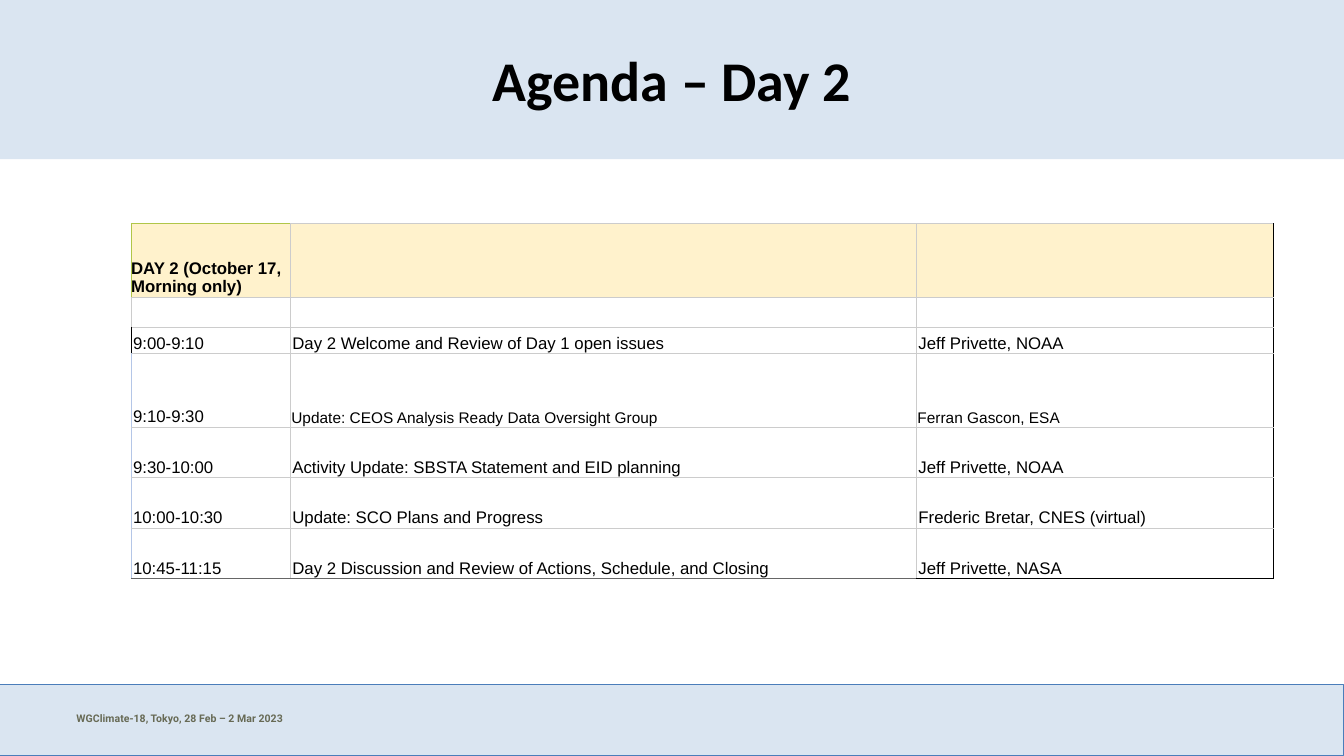
from dataclasses import dataclass

from lxml import etree
from pptx import Presentation
from pptx.dml.color import RGBColor
from pptx.enum import shapes, text
from pptx.oxml import ns
from pptx.util import Inches, Pt


@dataclass(frozen=True)
class Theme:
    band: str = "DAE5F1"
    band_line: str = "4A7DBA"
    ink: str = "000000"
    footer_ink: str = "676A55"
    day_fill: str = "FFF2CC"
    day_edge: str = "B0C648"
    grid: str = "CCCCCC"
    time_edge: str = "B4C6E7"
    bottom_edge: str = "666666"
    title_font: str = "Calibri"
    table_font: str = "Arial"
    footer_font: str = "Roboto"
    title_size: float = 40
    table_size: float = 12
    small_size: float = 11
    footer_size: float = 7.5
    rule: float = 0.5


THEME = Theme()
COLUMNS = [1.58, 6.21, 3.54]
ROW_HEIGHTS = [0.73, 0.3, 0.26, 0.73, 0.5, 0.5, 0.5]
SMALL_ROW = 3
AGENDA = [
    ("DAY 2 (October 17, Morning only)", "", ""),
    ("", "", ""),
    ("9:00-9:10", "Day 2 Welcome and Review of Day 1 open issues", "Jeff Privette, NOAA"),
    ("9:10-9:30", "Update: CEOS Analysis Ready Data Oversight Group", "Ferran Gascon, ESA"),
    ("9:30-10:00", "Activity Update: SBSTA Statement and EID planning", "Jeff Privette, NOAA"),
    ("10:00-10:30", "Update: SCO Plans and Progress", "Frederic Bretar, CNES (virtual)"),
    ("10:45-11:15", "Day 2 Discussion and Review of Actions, Schedule, and Closing",
     "Jeff Privette, NASA"),
]


def format_runs(paragraph, font, size, color, bold=False):
    for run in paragraph.runs:
        run.font.name, run.font.size, run.font.bold = font, Pt(size), bold
        run.font.color.rgb = RGBColor.from_string(color)


def add_band(slide, left, top, width, height, line=None):
    band = slide.shapes.add_shape(shapes.MSO_SHAPE.RECTANGLE, Inches(left), Inches(top),
                                  Inches(width), Inches(height))
    band.shadow.inherit = False
    band.fill.solid()
    band.fill.fore_color.rgb = RGBColor.from_string(THEME.band)
    if line:
        band.line.color.rgb = RGBColor.from_string(line)
        band.line.width = Pt(0.75)
    else:
        band.line.fill.background()


def add_label(slide, left, top, width, height, words):
    label = slide.shapes.add_textbox(Inches(left), Inches(top), Inches(width), Inches(height))
    label.text_frame.word_wrap = True
    label.text_frame.text = words
    return label.text_frame


def add_header(slide, left, top, width, height):
    add_band(slide, left, top, width, height)
    title = add_label(slide, left + 2.11, top + 0.16, 9.11, 1.25, "Agenda – Day 2")
    title.vertical_anchor = text.MSO_ANCHOR.MIDDLE
    title.paragraphs[0].alignment = text.PP_ALIGN.CENTER
    format_runs(title.paragraphs[0], THEME.title_font, THEME.title_size, THEME.ink, True)


def add_footer(slide, left, top, width, height):
    add_band(slide, left, top, width, height, THEME.band_line)
    meeting = add_label(slide, left + 0.66, top + 0.22, 8.65, 0.23,
                        "WGClimate-18, Tokyo, 28 Feb – 2 Mar 2023")
    format_runs(meeting.paragraphs[0], THEME.footer_font, THEME.footer_size,
                THEME.footer_ink, True)


def edge_colors(row, column):
    """Colours of the left, right, top and bottom edges of an agenda cell."""
    left = right = top = bottom = THEME.grid
    if column == 0:
        if row == 0:
            left = top = THEME.day_edge
        elif row == 2:
            left = THEME.ink
        elif row > 2:
            left = THEME.time_edge
    is_last_column = column == len(COLUMNS) - 1
    if is_last_column:
        right = THEME.ink
    if row == len(AGENDA) - 1:
        bottom = THEME.ink if is_last_column else THEME.bottom_edge
    return {"a:lnL": left, "a:lnR": right, "a:lnT": top, "a:lnB": bottom}


def draw_edges(cell, edges):
    properties = cell._tc.get_or_add_tcPr()
    for tag, color in edges.items():
        edge = etree.SubElement(properties, ns.qn(tag), w=str(Pt(THEME.rule)))
        fill = etree.SubElement(edge, ns.qn("a:solidFill"))
        etree.SubElement(fill, ns.qn("a:srgbClr"), val=color)


def fill_cell(cell, row, column, words):
    draw_edges(cell, edge_colors(row, column))
    is_small = row == SMALL_ROW and column > 0
    side = 0 if row == 0 else 0.01 if is_small else 0.02
    cell.margin_left = cell.margin_right = Inches(side)
    cell.margin_top = cell.margin_bottom = Inches(0.01)
    cell.vertical_anchor = text.MSO_ANCHOR.BOTTOM
    if row == 0:
        cell.fill.solid()
        cell.fill.fore_color.rgb = RGBColor.from_string(THEME.day_fill)
    else:
        cell.fill.background()
    size = THEME.small_size if is_small else THEME.table_size
    paragraph = cell.text_frame.paragraphs[0]
    if words:
        paragraph.text = words
        format_runs(paragraph, THEME.table_font, size, THEME.ink, row == 0)
    else:
        # Keeps an empty cell from stretching its row
        etree.SubElement(paragraph._p, ns.qn("a:endParaRPr"), sz=str(int(size * 100)))


def add_agenda(slide, left, top, width, height):
    agenda = slide.shapes.add_table(len(AGENDA), len(COLUMNS), Inches(left), Inches(top),
                                    Inches(width), Inches(height)).table
    agenda.first_row = agenda.horz_banding = False
    for column, column_width in zip(agenda.columns, COLUMNS):
        column.width = Inches(column_width)
    for row, row_height in zip(agenda.rows, ROW_HEIGHTS):
        row.height = Inches(row_height)
    for row, entries in enumerate(AGENDA):
        for column, words in enumerate(entries):
            fill_cell(agenda.cell(row, column), row, column, words)


def main():
    deck = Presentation()
    deck.slide_width, deck.slide_height = Inches(13.33), Inches(7.5)
    slide = deck.slides.add_slide(deck.slide_layouts[6])
    add_footer(slide, 0, 6.79, 13.33, 0.71)
    add_header(slide, 0, 0, 13.33, 1.58)
    add_agenda(slide, 1.3, 2.22, sum(COLUMNS), sum(ROW_HEIGHTS))
    deck.save("out.pptx")


if __name__ == "__main__":
    main()
